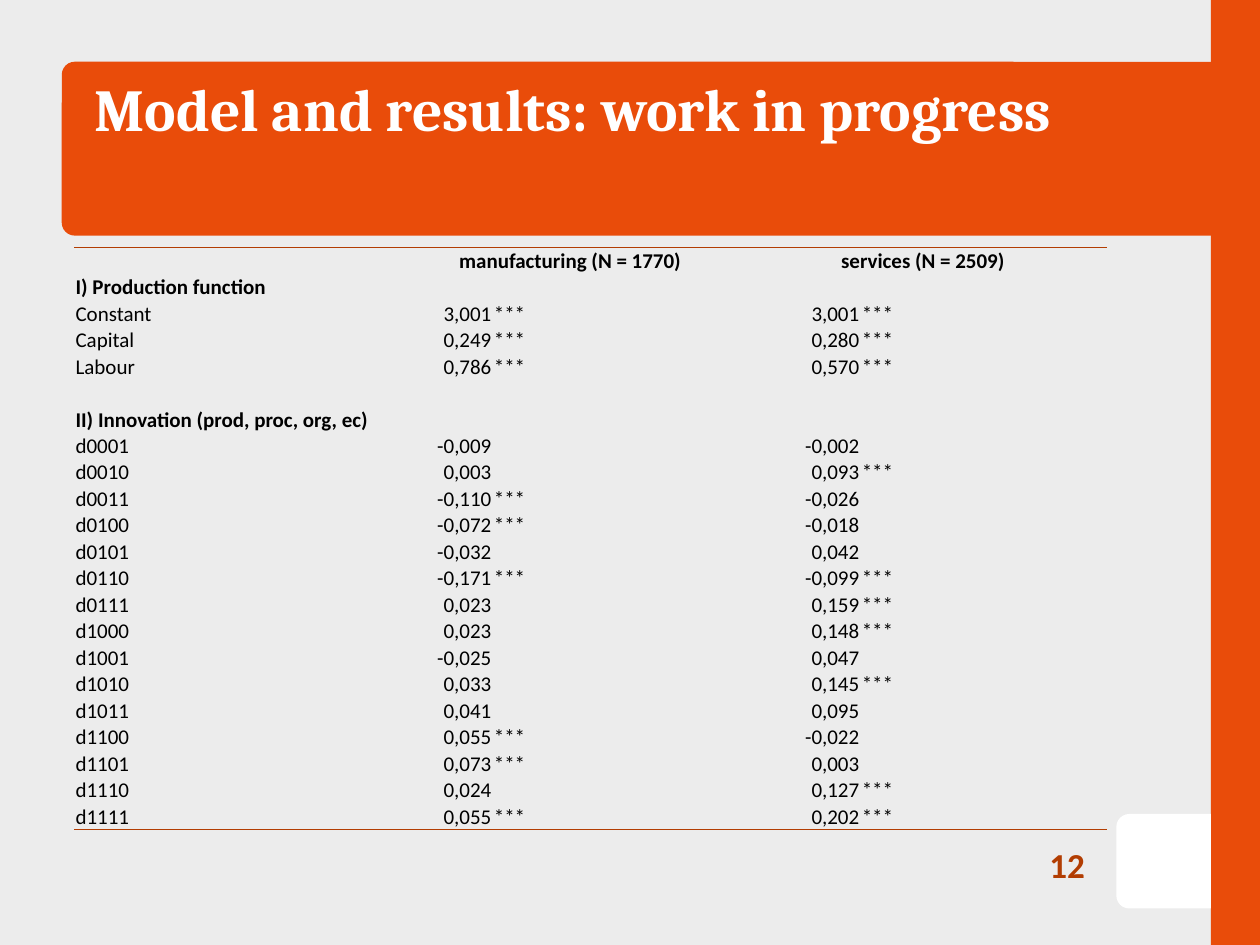
from lxml.etree import SubElement
from pptx import Presentation
from pptx.dml.color import RGBColor
from pptx.enum.shapes import MSO_SHAPE
from pptx.enum.text import MSO_ANCHOR, PP_ALIGN
from pptx.oxml import parse_xml
from pptx.oxml.ns import nsdecls, qn
from pptx.util import Inches, Pt

ORANGE, RUST, WHITE, BLACK, GREY = "E94C0A", "B23D02", "FFFFFF", "000000", "ECECEC"
PLAIN = "{2D5ABB26-0587-4C30-8999-92F81FD0307C}"  # table style without fills or grid
TITLE = "Model and results: work in progress"
NUMBER = "12"
HEADS = ["", "manufacturing (N = 1770)", "", "services (N = 2509)", ""]
# Label, then estimate and stars for manufacturing and for services
ROWS = [
    ("I) Production function",),
    ("Constant", "3,001", "***", "3,001", "***"),
    ("Capital", "0,249", "***", "0,280", "***"),
    ("Labour", "0,786", "***", "0,570", "***"),
    ("",),
    ("II) Innovation (prod, proc, org, ec)",),
    ("d0001", "-0,009", "", "-0,002", ""),
    ("d0010", "0,003", "", "0,093", "***"),
    ("d0011", "-0,110", "***", "-0,026", ""),
    ("d0100", "-0,072", "***", "-0,018", ""),
    ("d0101", "-0,032", "", "0,042", ""),
    ("d0110", "-0,171", "***", "-0,099", "***"),
    ("d0111", "0,023", "", "0,159", "***"),
    ("d1000", "0,023", "", "0,148", "***"),
    ("d1001", "-0,025", "", "0,047", ""),
    ("d1010", "0,033", "", "0,145", "***"),
    ("d1011", "0,041", "", "0,095", ""),
    ("d1100", "0,055", "***", "-0,022", ""),
    ("d1101", "0,073", "***", "0,003", ""),
    ("d1110", "0,024", "", "0,127", "***"),
    ("d1111", "0,055", "***", "0,202", "***"),
]
WIDTHS = [2.6, 0.72, 1.95, 0.97, 1.96]
LEFT, RIGHT, MID = PP_ALIGN.LEFT, PP_ALIGN.RIGHT, PP_ALIGN.CENTER
ALIGNS = [LEFT, RIGHT, LEFT, RIGHT, LEFT]


def rgb(code):
    return RGBColor.from_string(code)


def block(slide, kind, at, color, adj=()):
    shape = slide.shapes.add_shape(kind, *map(Inches, at))
    shape.shadow.inherit = False
    shape.fill.solid()
    shape.fill.fore_color.rgb = rgb(color)
    shape.line.fill.background()
    for i, value in enumerate(adj):
        shape.adjustments[i] = value
    return shape


def write(frame, text, size, color, align=LEFT, bold=True, face="Calibri"):
    par = frame.paragraphs[0]
    par.alignment = align
    if not text:  # an empty cell still needs its text size
        SubElement(par._p, qn("a:endParaRPr"), sz=str(size * 100))
        return
    run = par.add_run()
    run.text = text
    font = run.font
    font.name, font.size, font.bold = face, Pt(size), bold
    font.color.rgb = rgb(color)


def inset(frame, left, top, right, bottom):
    frame.margin_left, frame.margin_top = Inches(left), Inches(top)
    frame.margin_right, frame.margin_bottom = Inches(right), Inches(bottom)


def rule(cell, side):
    """Draw a thin line on the cell's top (T) or bottom (B)."""
    cell._tc.get_or_add_tcPr().insert(0, parse_xml(
        f'<a:ln{side} {nsdecls("a")} w="6350"><a:solidFill><a:srgbClr val="{RUST}"/>'
        f'</a:solidFill></a:ln{side}>'))


def fill_table(slide):
    count = len(ROWS) + 1
    table = slide.shapes.add_table(
        count, len(WIDTHS), Inches(0.59), Inches(1.96),
        Inches(sum(WIDTHS)), Inches(0.21 * count)).table
    table.first_row = table.horz_banding = False
    table._tbl.tblPr.find(qn("a:tableStyleId")).text = PLAIN
    for col, width in zip(table.columns, WIDTHS):
        col.width = Inches(width)
    for r, row in enumerate([HEADS, *ROWS]):
        head = r == 0
        bold = head or len(row) == 1
        texts = [*row, *[""] * (len(WIDTHS) - len(row))]
        for c, text in enumerate(texts):
            cell = table.cell(r, c)
            cell.fill.background()
            inset(cell, 0.01, 0.01, 0.01, 0)
            cell.vertical_anchor = MSO_ANCHOR.BOTTOM
            write(cell.text_frame, text, 12, BLACK, MID if head else ALIGNS[c], bold)
            if head:
                rule(cell, "T")
            elif r == count - 1:
                rule(cell, "B")
    for c in (1, 3):
        table.cell(0, c).merge(table.cell(0, c + 1))


def main():
    deck = Presentation()
    deck.slide_width, deck.slide_height = Inches(10), Inches(7.5)
    slide = deck.slides.add_slide(deck.slide_layouts[5])
    slide.background.fill.solid()
    slide.background.fill.fore_color.rgb = rgb(GREY)

    block(slide, MSO_SHAPE.RECTANGLE, (9.61, 0, 0.39, 7.5), ORANGE)
    tab = block(slide, MSO_SHAPE.ROUND_2_SAME_RECTANGLE,
                (8.86, 6.46, 0.75, 0.75), WHITE, (0.136, 0))
    tab.rotation = 270
    block(slide, MSO_SHAPE.ROUNDED_RECTANGLE, (0.49, 0.49, 9.39, 1.38), ORANGE, (0.075,))

    title = slide.shapes.title
    slide.shapes._spTree.append(title._element)  # in front of the banner
    title.left, title.top = Inches(0.65), Inches(0.49)
    title.width, title.height = Inches(9.08), Inches(1.38)
    frame = title.text_frame
    frame.vertical_anchor = MSO_ANCHOR.TOP
    inset(frame, 0.1, 0.08, 0.1, 0.05)
    write(frame, TITLE, 34, WHITE, face="Cambria")

    frame = slide.shapes.add_textbox(*map(Inches, (7.99, 6.63, 0.62, 0.47))).text_frame
    frame.word_wrap = True
    frame.vertical_anchor = MSO_ANCHOR.MIDDLE
    inset(frame, 0, 0, 0, 0)
    write(frame, NUMBER, 20, RUST, RIGHT)

    fill_table(slide)
    deck.save("out.pptx")


if __name__ == "__main__":
    main()
